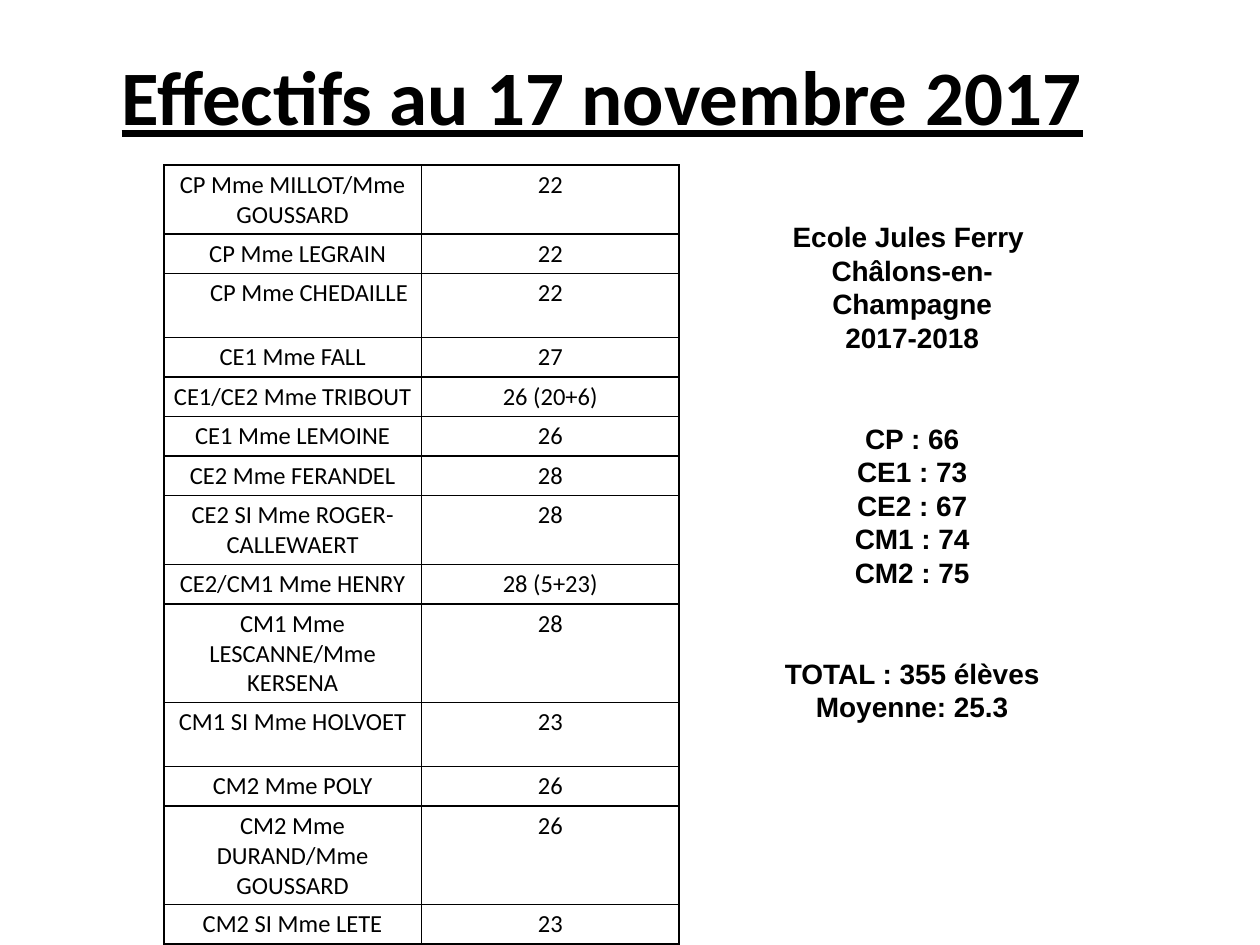
from lxml import etree
from pptx import Presentation
from pptx.dml.color import RGBColor
from pptx.enum.text import MSO_ANCHOR, PP_ALIGN
from pptx.oxml.ns import qn
from pptx.util import Inches, Pt

BLACK = RGBColor(0, 0, 0)
CENTER = PP_ALIGN.CENTER
MIDDLE, BOTTOM = MSO_ANCHOR.MIDDLE, MSO_ANCHOR.BOTTOM

# Class, head count, left indent of the name in inches
CLASSES = [
    ("CP Mme MILLOT/Mme GOUSSARD", "22", 0),
    ("CP Mme LEGRAIN", "22", 0.08),
    ("CP Mme CHEDAILLE", "22", 0.26),
    ("CE1 Mme FALL", "27", 0),
    ("CE1/CE2 Mme TRIBOUT", "26 (20+6)", 0),
    ("CE1 Mme LEMOINE", "26", 0),
    ("CE2 Mme FERANDEL", "28", 0),
    ("CE2 SI Mme ROGER-CALLEWAERT", "28", 0),
    ("CE2/CM1 Mme HENRY", "28 (5+23)", 0),
    ("CM1 Mme LESCANNE/Mme KERSENA", "28", 0),
    ("CM1 SI Mme HOLVOET", "23", 0),
    ("CM2 Mme POLY", "26", 0),
    ("CM2 Mme DURAND/Mme GOUSSARD", "26", 0),
    ("CM2 SI Mme LETE", "23", 0),
]
TALL = {2, 7, 9, 10}
GROUPS = [
    ["Ecole Jules Ferry ", "Châlons-en-Champagne", "2017-2018"],
    ["CP : 66", "CE1 : 73", "CE2 : 67", "CM1 : 74", "CM2 : 75"],
    ["TOTAL : 355 élèves", "Moyenne: 25.3"],
]


def add_run(para, text, size, face, bold=False, under=False):
    para.alignment = CENTER
    run = para.add_run()
    run.text = text
    font = run.font
    font.size, font.name = Pt(size), face
    font.bold, font.underline = bold, under
    font.color.rgb = BLACK


def add_frame(slide, box, anchor):
    frame = slide.shapes.add_textbox(*map(Inches, box)).text_frame
    frame.word_wrap = True
    frame.vertical_anchor = anchor
    return frame


def add_border(cell):
    props = cell._tc.get_or_add_tcPr()
    for i, side in enumerate(("lnL", "lnR", "lnT", "lnB")):
        line = etree.Element(qn("a:" + side), w=str(Pt(1)))
        fill = etree.SubElement(line, qn("a:solidFill"))
        etree.SubElement(fill, qn("a:srgbClr"), val=str(BLACK))
        props.insert(i, line)  # borders come before the fill


def add_title(slide, box):
    frame = add_frame(slide, box, MIDDLE)
    add_run(frame.paragraphs[0], "Effectifs au 17 novembre 2017", 44,
            "Calibri", bold=True, under=True)


def add_roll(slide, box):
    """Table of classes and their head counts."""
    table = slide.shapes.add_table(len(CLASSES), 2, *map(Inches, box)).table
    table.first_row = table.horz_banding = False
    for col in table.columns:
        col.width = Inches(box[2] / 2)
    for r, (name, count, indent) in enumerate(CLASSES):
        table.rows[r].height = Inches(0.51 if r in TALL else 0.29)
        for c, text in enumerate((name, count)):
            cell = table.cell(r, c)
            cell.margin_left = cell.margin_right = Inches(0.04)
            cell.margin_top = cell.margin_bottom = Inches(0.04)
            cell.fill.background()
            add_border(cell)
            para = cell.text_frame.paragraphs[0]
            add_run(para, text, 14, "Calibri")
            if indent and c == 0:
                para._p.get_or_add_pPr().set("marL", str(Inches(indent)))


def add_totals(slide, box):
    """School name, totals by level and overall total."""
    frame = add_frame(slide, box, BOTTOM)
    pitch = 19.2
    para = frame.paragraphs[0]
    for g, group in enumerate(GROUPS):
        for i, text in enumerate(group):
            if g or i:
                para = frame.add_paragraph()
            para.line_spacing = Pt(pitch)
            if g and i == 0:
                para.space_before = Pt(2 * pitch)
            add_run(para, text, 16, "Arial", bold=True)


def main():
    deck = Presentation()
    deck.slide_width, deck.slide_height = Inches(10), Inches(7.5)
    slide = deck.slides.add_slide(deck.slide_layouts[6])
    add_title(slide, (0.28, 0.13, 9, 1.25))
    add_roll(slide, (1.3, 1.31, 4.09, 6.12))
    add_totals(slide, (5.94, 0.3, 2.6, 5.49))
    deck.save("out.pptx")


if __name__ == "__main__":
    main()
